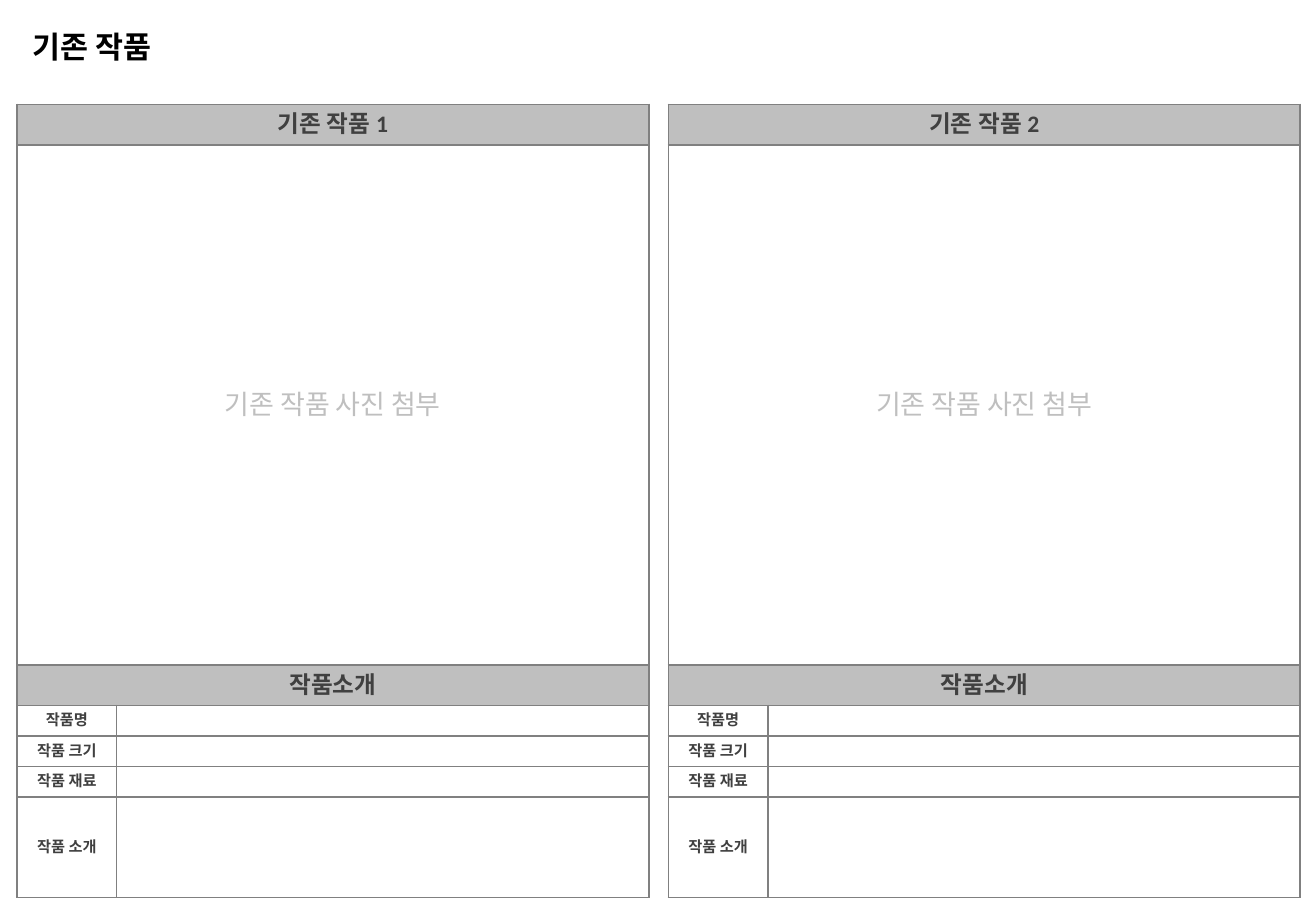
import pptx
import pptx.dml.color
import pptx.enum.text
import pptx.oxml.ns
import pptx.util
from lxml import etree

FONT = "Calibri"
GREY, DARK, WHITE, RULE = "BFBFBF", "404040", "FFFFFF", "808080"
COLUMNS = [0.82, 4.38]
ROWS = [0.33, 4.28, 0.33, 0.25, 0.25, 0.25, 0.83]
SHEET_LEFT, SHEET_TOP, SHEET_STEP = 0.14, 0.86, 5.36
FIELDS = ["작품명", "작품 크기", "작품 재료", "작품 소개"]


def rgb(value):
    """Turn a hex string into a colour."""
    return pptx.dml.color.RGBColor.from_string(value)


def add_xml(parent, tag, **attributes):
    """Append a drawing element to a parent and return it."""
    return etree.SubElement(parent, pptx.oxml.ns.qn(tag), attributes)


def write(frame, text, size=9, color=DARK, bold=True, align="LEFT"):
    """Write one formatted paragraph into a text frame."""
    paragraph = frame.paragraphs[0]
    paragraph.alignment = getattr(pptx.enum.text.PP_ALIGN, align)
    if not text:
        add_xml(paragraph._p, "a:endParaRPr", sz=str(size * 100))
        return
    run = paragraph.add_run()
    run.text = text
    run.font.size = pptx.util.Pt(size)
    run.font.bold = bold
    run.font.name = FONT
    run.font.color.rgb = rgb(color)
    add_xml(run._r.get_or_add_rPr(), "a:ea", typeface=FONT)


def rule_cell(cell):
    """Draw the four borders of a cell."""
    properties = cell._tc.get_or_add_tcPr()
    for position, side in enumerate(["a:lnL", "a:lnR", "a:lnT", "a:lnB"]):
        border = add_xml(properties, side, w=str(pptx.util.Pt(1)))
        add_xml(add_xml(border, "a:solidFill"), "a:srgbClr", val=RULE)
        properties.insert(position, border)


def fill_cell(cell, text="", fill=WHITE, **text_format):
    """Set the fill and centred text of a cell."""
    cell.fill.solid()
    cell.fill.fore_color.rgb = rgb(fill)
    cell.vertical_anchor = pptx.enum.text.MSO_ANCHOR.MIDDLE
    write(cell.text_frame, text, align="CENTER", **text_format)


def add_artwork_sheet(slide, number):
    """Add the form table for one existing artwork."""
    left = SHEET_LEFT + (number - 1) * SHEET_STEP
    bounds = [pptx.util.Inches(length)
              for length in (left, SHEET_TOP, sum(COLUMNS), sum(ROWS))]
    sheet = slide.shapes.add_table(len(ROWS), len(COLUMNS), *bounds).table
    sheet.first_row = sheet.horz_banding = False
    for column, width in zip(sheet.columns, COLUMNS):
        column.width = pptx.util.Inches(width)
    for row, height in zip(sheet.rows, ROWS):
        row.height = pptx.util.Inches(height)

    banners = [
        (f"기존 작품 {number}", dict(fill=GREY, size=14)),
        ("기존 작품 사진 첨부", dict(size=16, color=GREY, bold=False)),
        ("작품소개", dict(fill=GREY, size=14)),
    ]
    for row, (text, look) in enumerate(banners):
        sheet.cell(row, 0).merge(sheet.cell(row, 1))
        fill_cell(sheet.cell(row, 0), text, **look)
    for row, field in enumerate(FIELDS, len(banners)):
        fill_cell(sheet.cell(row, 0), field)
        fill_cell(sheet.cell(row, 1))
    for cell in sheet.iter_cells():
        rule_cell(cell)


def add_title(slide, text):
    """Add the slide heading."""
    bounds = [pptx.util.Inches(length) for length in (0.17, 0.18, 1.27, 0.4)]
    frame = slide.shapes.add_textbox(*bounds).text_frame
    frame.word_wrap = False
    write(frame, text, size=18, color="000000")


def main():
    """Build the slide and save it."""
    deck = pptx.Presentation()
    deck.slide_width = pptx.util.Inches(10.83)
    deck.slide_height = pptx.util.Inches(7.5)
    slide = deck.slides.add_slide(deck.slide_layouts[6])
    add_title(slide, "기존 작품")
    for number in (1, 2):
        add_artwork_sheet(slide, number)
    deck.save("out.pptx")


if __name__ == "__main__":
    main()
